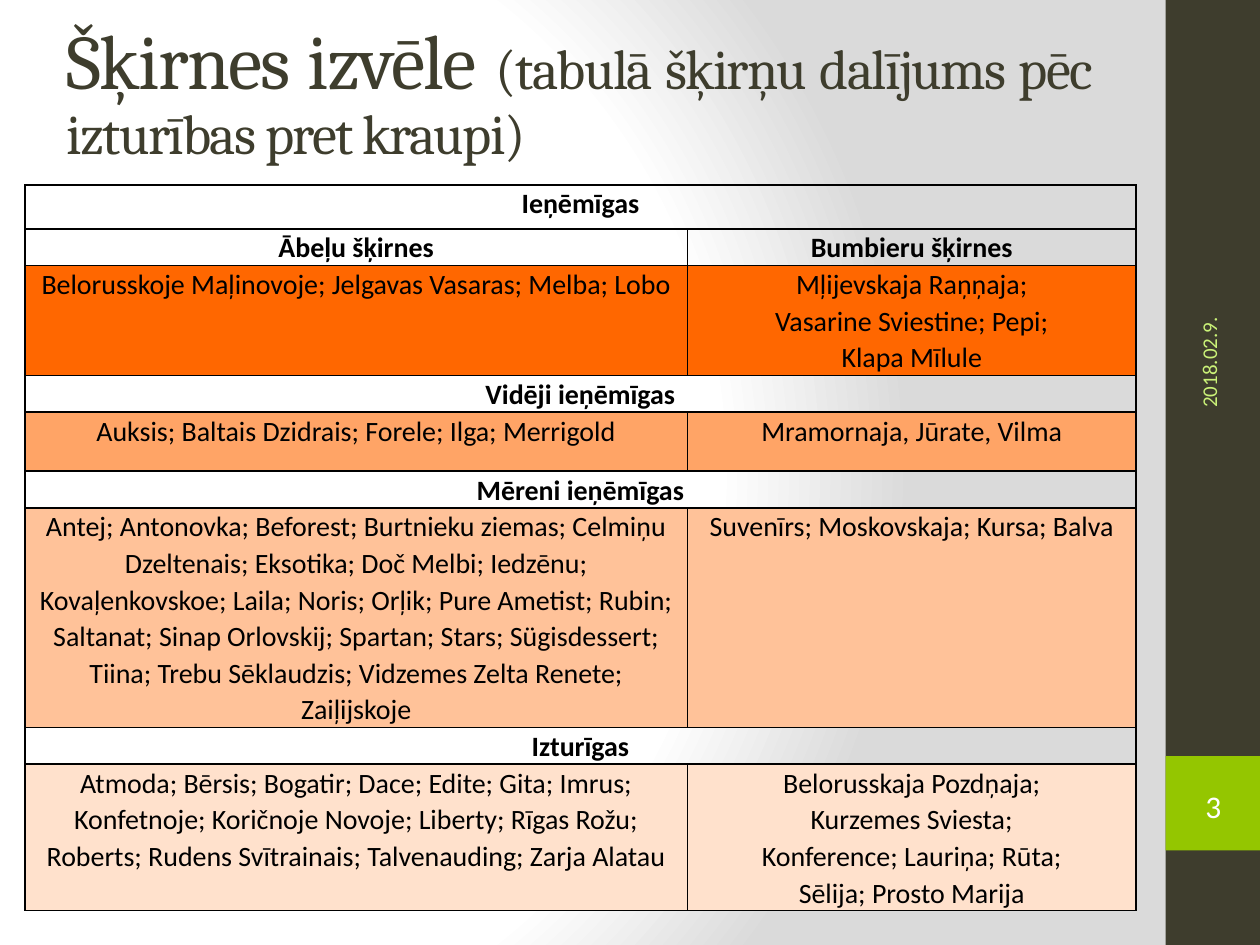
from pptx import Presentation
from pptx.dml.color import RGBColor
from pptx.enum.shapes import MSO_SHAPE
from pptx.enum.text import MSO_ANCHOR, PP_ALIGN
from pptx.oxml import parse_xml
from pptx.util import Pt

RECT, BRACKETS = MSO_SHAPE.RECTANGLE, MSO_SHAPE.DOUBLE_BRACKET
LEFT, CENTER, JUSTIFY = PP_ALIGN.LEFT, PP_ALIGN.CENTER, PP_ALIGN.JUSTIFY
TOP, MIDDLE = MSO_ANCHOR.TOP, MSO_ANCHOR.MIDDLE
NS = 'xmlns:a="http://schemas.openxmlformats.org/drawingml/2006/main"'

DARK, GREEN, LIME, WHITE, BLACK = "3E3D2D", "94C600", "CAF278", "FFFFFF", "000000"
COLUMN_WIDTHS = (378.7, 256.3)
HEADING_HEIGHT = 16.6
GROUPS = [
    ("Ieņēmīgas", 25.2, "FF6700", 51.1,
     ["Belorusskoje Maļinovoje; Jelgavas Vasaras; Melba; Lobo"],
     ["Mļijevskaja Raņņaja;", "Vasarine Sviestine; Pepi;", "Klapa Mīlule"]),
    ("Vidēji ieņēmīgas", HEADING_HEIGHT, "FFA466", 33.8,
     ["Auksis; Baltais Dzidrais; Forele; Ilga; Merrigold"],
     ["Mramornaja, Jūrate, Vilma"]),
    ("Mēreni ieņēmīgas", HEADING_HEIGHT, "FFC299", 121,
     ["Antej; Antonovka; Beforest; Burtnieku ziemas; Celmiņu Dzeltenais; "
      "Eksotika; Doč Melbi; Iedzēnu; Kovaļenkovskoe; Laila; Noris; Orļik; "
      "Pure Ametist; Rubin; Saltanat; Sinap Orlovskij; Spartan; Stars; "
      "Sügisdessert; Tiina; Trebu Sēklaudzis; Vidzemes Zelta Renete; Zaiļijskoje"],
     ["Suvenīrs; Moskovskaja; Kursa; Balva"]),
    ("Izturīgas", HEADING_HEIGHT, "FFE1CC", 68.4,
     ["Atmoda; Bērsis; Bogatir; Dace; Edite; Gita; Imrus; Konfetnoje; "
      "Koričnoje Novoje; Liberty; Rīgas Rožu; Roberts; Rudens Svītrainais; "
      "Talvenauding; Zarja Alatau"],
     ["Belorusskaja Pozdņaja;", "Kurzemes Sviesta;",
      "Konference; Lauriņa; Rūta;", "Sēlija; Prosto Marija"]),
]


def rgb(color):
    """Turn a hex string into a colour."""
    return RGBColor.from_string(color)


def style(p, size, color, align, font="Calibri", bold=False):
    """Format a whole paragraph."""
    p.alignment = align
    p.font.name, p.font.size, p.font.bold = font, Pt(size), bold
    p.font.color.rgb = rgb(color)


def add_background(s):
    """Give the slide its radial white to grey gradient."""
    s.background.fill.solid()
    bg = s.background.fill._xPr
    stops = "".join(
        f'<a:gs pos="{pos}"><a:srgbClr val="{color}"/></a:gs>'
        for pos, color in ((0, WHITE), (75000, WHITE), (100000, "DADADA")))
    bg.replace(bg[0], parse_xml(
        f'<a:gradFill {NS} rotWithShape="1"><a:gsLst>{stops}</a:gsLst>'
        '<a:path path="circle"><a:fillToRect l="20000" t="50000" r="100000" '
        'b="50000"/></a:path></a:gradFill>'))


def add_block(s, left, top, width, height, color):
    """Add a plain filled rectangle."""
    sp = s.shapes.add_shape(RECT, Pt(left), Pt(top), Pt(width), Pt(height))
    sp.shadow.inherit = False
    sp.fill.solid()
    sp.fill.fore_color.rgb = rgb(color)
    sp.line.fill.background()


def add_sidebar(s, left, top, width, height):
    """Add the side band with its date and slide number."""
    add_block(s, left, top, width, height, DARK)
    add_block(s, left, top + 432, width, width, GREEN)

    sp = s.shapes.add_shape(BRACKETS, Pt(left + 5.8), Pt(top + 445), Pt(43.2), Pt(31))
    sp.shadow.inherit = False
    sp.fill.background()
    sp.line.fill.background()
    tf = sp.text_frame
    tf.margin_left = tf.margin_right = tf.margin_top = tf.margin_bottom = 0
    tf.vertical_anchor = MIDDLE
    tf.text = "3"
    style(tf.paragraphs[0], 18, WHITE, CENTER)

    sp = s.shapes.add_textbox(Pt(left - 71.3), Pt(top + 129.6), Pt(192.2), Pt(28.8))
    sp.rotation = 270
    tf = sp.text_frame
    tf.word_wrap = True
    tf.vertical_anchor = MIDDLE
    tf.text = "2018.02.9."
    style(tf.paragraphs[0], 12, LIME, LEFT)


def add_title(s, left, top, width, height):
    """Fill the title placeholder with a large and a smaller part."""
    sp = s.shapes.title
    sp.left, sp.top, sp.width, sp.height = Pt(left), Pt(top), Pt(width), Pt(height)
    tf = sp.text_frame
    tf.word_wrap = True
    tf.vertical_anchor = MIDDLE
    p = tf.paragraphs[0]
    style(p, 44, DARK, JUSTIFY, "Cambria")
    p.line_spacing = 0.9
    for text, size in (("Šķirnes izvēle ", 44),
                       ("(tabulā šķirņu dalījums pēc izturības pret kraupi)", 32)):
        r = p.add_run()
        r.text = text
        r.font.size = Pt(size)
        r.font._element.set("spc", "-100")


def fill_cell(cell, lines, color=None):
    """Write centred lines in a bordered cell; cells without colour are headings."""
    cell.margin_left = cell.margin_right = Pt(5)
    cell.margin_top = cell.margin_bottom = 0
    cell.vertical_anchor = TOP
    tf = cell.text_frame
    tf.text = "\n".join(lines)
    for p in tf.paragraphs:
        style(p, 16, BLACK, CENTER, bold=color is None)
        p.line_spacing = 1.07
    if color:
        cell.fill.solid()
        cell.fill.fore_color.rgb = rgb(color)
    else:
        cell.fill.background()
    for i, side in enumerate(("lnL", "lnR", "lnT", "lnB")):
        cell._tc.tcPr.insert(i, parse_xml(
            f'<a:{side} {NS} w="12700"><a:solidFill><a:srgbClr val="{BLACK}"/>'
            f'</a:solidFill></a:{side}>'))


def add_varieties(s, left, top, width, height):
    """Add the table of varieties grouped by resistance."""
    rows = []
    for heading, heading_height, color, body_height, apples, pears in GROUPS:
        rows.append((heading_height, None, [[heading]]))
        rows.append((body_height, color, [apples, pears]))
    rows.insert(1, (HEADING_HEIGHT, None, [["Ābeļu šķirnes"], ["Bumbieru šķirnes"]]))

    table = s.shapes.add_table(len(rows), len(COLUMN_WIDTHS), Pt(left), Pt(top),
                               Pt(width), Pt(height)).table
    table.first_row = table.horz_banding = False
    for column, column_width in zip(table.columns, COLUMN_WIDTHS):
        column.width = Pt(column_width)
    for i, (row_height, color, texts) in enumerate(rows):
        table.rows[i].height = Pt(row_height)
        if len(texts) == 1:
            table.cell(i, 0).merge(table.cell(i, 1))
        for j in range(len(COLUMN_WIDTHS)):
            fill_cell(table.cell(i, j), texts[j] if j < len(texts) else [], color)


def main():
    """Build and save the slide."""
    prs = Presentation()
    prs.slide_width, prs.slide_height = Pt(720), Pt(540)
    s = prs.slides.add_slide(prs.slide_layouts[5])
    add_background(s)
    add_title(s, 31, 9.4, 599.8, 90)
    add_varieties(s, 14.2, 105.6, sum(COLUMN_WIDTHS), 408)
    add_sidebar(s, 666, 0, 54, 540)
    prs.save("out.pptx")


if __name__ == "__main__":
    main()
